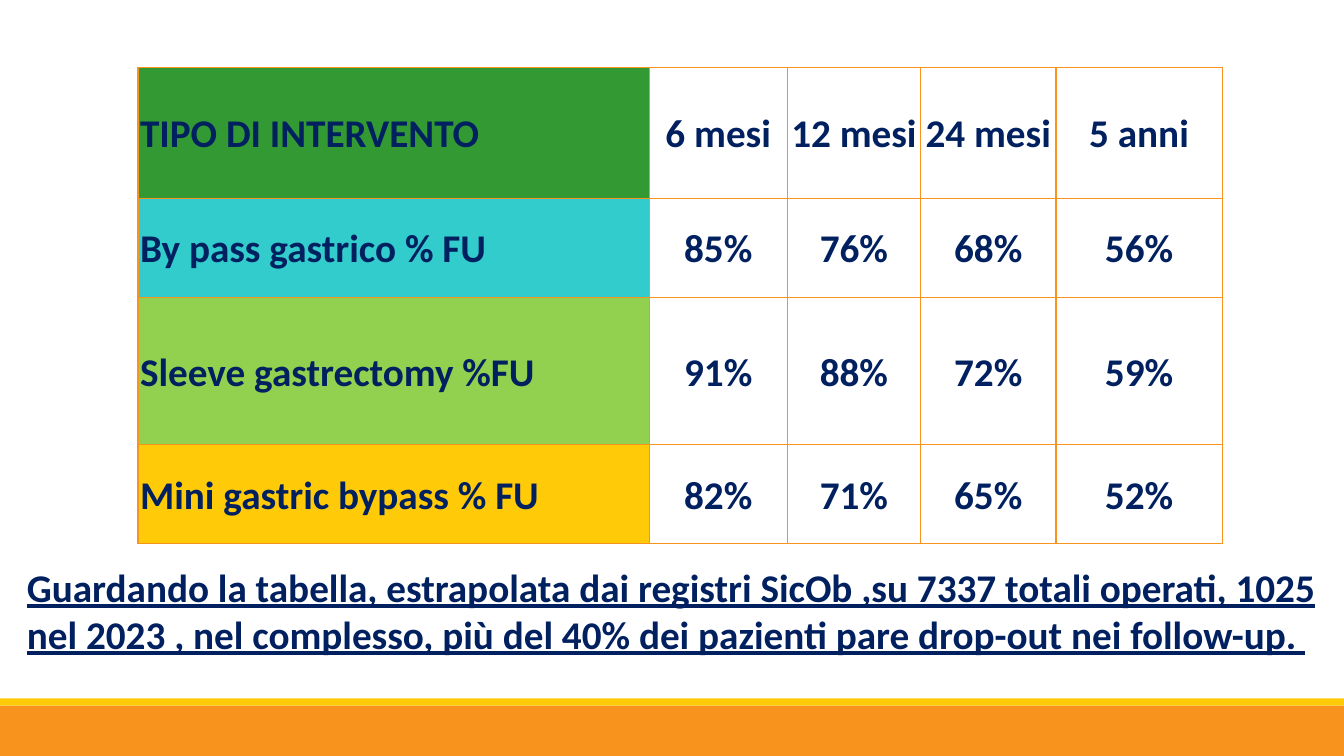
from lxml.etree import SubElement
from pptx import Presentation
from pptx.dml.color import RGBColor
from pptx.enum.shapes import MSO_SHAPE as Shape
from pptx.enum.text import MSO_ANCHOR as Anchor, PP_ALIGN as Align
from pptx.oxml.ns import qn
from pptx.util import Cm, Pt

NAVY = RGBColor(0x00, 0x20, 0x60)
WHITE = RGBColor(0xFF, 0xFF, 0xFF)
ORANGE = RGBColor(0xF8, 0x93, 0x1D)
YELLOW = RGBColor(0xFF, 0xCA, 0x08)
GREEN = RGBColor(0x33, 0x99, 0x33)
TEAL = RGBColor(0x33, 0xCC, 0xCC)
LIME = RGBColor(0x92, 0xD0, 0x50)


def write(para, text, line=False):
    run = para.add_run()
    run.text = text
    font = run.font
    font.name, font.size, font.bold = "Calibri", Pt(28), True
    font.underline = line
    font.color.rgb = NAVY


def frame(cell):
    props = cell._tc.get_or_add_tcPr()
    for spot, side in enumerate(("lnL", "lnR", "lnT", "lnB")):
        edge = SubElement(props, qn(f"a:{side}"), w=str(Pt(1)))
        fill = SubElement(edge, qn("a:solidFill"))
        SubElement(fill, qn("a:srgbClr"), val=str(ORANGE))
        props.insert(spot, edge)  # borders come before the fill


deck = Presentation()
deck.slide_width, deck.slide_height = Cm(33.87), Cm(19.05)
slide = deck.slides.add_slide(deck.slide_layouts[6])
shapes = slide.shapes

# Bottom bands
for top, height, color in ((17.78, 1.27, ORANGE), (17.6, 0.18, YELLOW)):
    band = shapes.add_shape(Shape.RECTANGLE, 0, Cm(top), deck.slide_width, Cm(height))
    band.shadow.inherit = False
    band.fill.solid()
    band.fill.fore_color.rgb = color
    band.line.fill.background()

# Closing remark
box = shapes.add_textbox(Cm(0.43), Cm(14.05), Cm(33.43), Cm(2.64))
note = box.text_frame
note.word_wrap = True
note.vertical_anchor = Anchor.MIDDLE
write(
    note.paragraphs[0],
    "Guardando la tabella, estrapolata dai registri SicOb ,su 7337 totali operati, 1025 "
    "nel 2023 , nel complesso, più del 40% dei pazienti pare drop-out nei follow-up. ",
    line=True,
)

# Follow-up table: first-column colour, row height, texts
rows = (
    (GREEN, 3.3, ("TIPO DI INTERVENTO", "6 mesi", "12 mesi", "24 mesi", "5 anni")),
    (TEAL, 2.49, ("By pass gastrico % FU", "85%", "76%", "68%", "56%")),
    (LIME, 3.72, ("Sleeve gastrectomy %FU", "91%", "88%", "72%", "59%")),
    (YELLOW, 2.49, ("Mini gastric bypass % FU", "82%", "71%", "65%", "52%")),
)
widths = (12.88, 3.48, 3.36, 3.41, 4.19)
table = shapes.add_table(
    len(rows), len(widths), Cm(3.48), Cm(1.7),
    Cm(sum(widths)), Cm(sum(row[1] for row in rows)),
).table
for col, width in zip(table.columns, widths):
    col.width = Cm(width)

for r, (color, height, texts) in enumerate(rows):
    table.rows[r].height = Cm(height)
    for c, text in enumerate(texts):
        cell = table.cell(r, c)
        cell.fill.solid()
        cell.fill.fore_color.rgb = WHITE if c else color
        cell.vertical_anchor = Anchor.MIDDLE
        cell.margin_left = cell.margin_right = Cm(0.05)
        cell.margin_top = cell.margin_bottom = Cm(0.05)
        para = cell.text_frame.paragraphs[0]
        para.alignment = Align.CENTER if c else Align.LEFT
        para.line_spacing = 1.07
        para.space_after = Pt(8)
        write(para, text)
        frame(cell)

deck.save("out.pptx")
